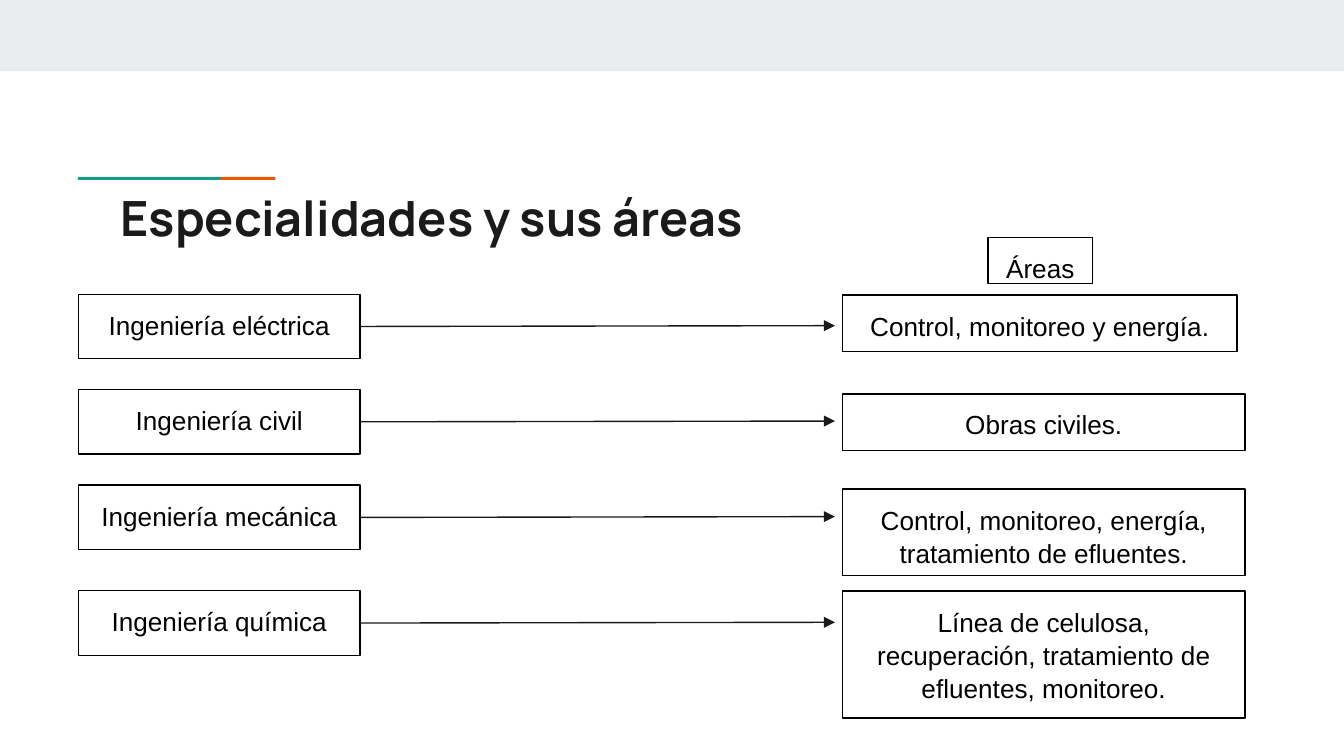
from pptx import Presentation
from pptx.dml.color import RGBColor as Rgb
from pptx.enum.shapes import MSO_CONNECTOR as Conn, MSO_SHAPE as Kind
from pptx.enum.text import MSO_ANCHOR as Anchor, PP_ALIGN as Align
from pptx.oxml.ns import qn
from pptx.util import Pt
from lxml.etree import SubElement as Sub

HUES = {"band": "E9EDEE", "green": "1A9988", "orange": "EB5600",
        "ink": "1A1A1A", "black": "000000"}
TITLE = {"name": "Manrope", "size": Pt(26), "bold": True}
LABEL = {"name": "Arial", "size": Pt(14)}
INSET = Pt(7.2)

# Field, top of field, area, area box (top, width, height)
ROWS = [
    ("Ingeniería eléctrica", 157.6, "Control, monitoreo y energía.",
     (158.1, 211.2, 30.4)),
    ("Ingeniería civil", 208.7, "Obras civiles.", (211, 215.5, 30.4)),
    ("Ingeniería mecánica", 259.9,
     "Control, monitoreo, energía, tratamiento de efluentes.",
     (262, 215.5, 46.5)),
    ("Ingeniería química", 316.5,
     "Línea de celulosa, recuperación, tratamiento de efluentes, monitoreo.",
     (316.7, 215.5, 68.1)),
]


def hue(name):
    return Rgb.from_string(HUES[name])


def write(shape, text, style, color, align):
    frame = shape.text_frame
    formats = {"word_wrap": True, "vertical_anchor": Anchor.TOP,
               "margin_left": INSET, "margin_right": INSET,
               "margin_top": INSET, "margin_bottom": INSET}
    for key, value in formats.items():
        setattr(frame, key, value)
    para = frame.paragraphs[0]
    para.alignment = align
    run = para.add_run()
    run.text = text
    for key, value in style.items():
        setattr(run.font, key, value)
    run.font.color.rgb = hue(color)
    return para


def add_bar(slide, box, color):
    bar = slide.shapes.add_shape(Kind.RECTANGLE, *map(Pt, box))
    bar.shadow.inherit = False
    bar.fill.solid()
    bar.fill.fore_color.rgb = hue(color)
    bar.line.fill.background()


def add_label(slide, box, text):
    label = slide.shapes.add_shape(Kind.RECTANGLE, *map(Pt, box))
    label.shadow.inherit = False
    label.fill.background()
    label.line.color.rgb = hue("black")
    label.line.width = Pt(0.75)
    para = write(label, text, LABEL, "black", Align.CENTER)
    para.line_spacing = 1.05


def add_arrow(slide, start, end):
    arrow = slide.shapes.add_connector(Conn.STRAIGHT, *map(Pt, start + end))
    arrow.line.color.rgb = hue("ink")
    arrow.line.width = Pt(0.75)
    Sub(arrow.line._get_or_add_ln(), qn("a:tailEnd"), type="triangle")
    Sub(arrow._element.spPr, qn("a:effectLst"))


def add_head(slide, box):
    left, top, width, height = box
    # Band and two-tone accent
    add_bar(slide, (left, top, width, 38.2), "band")
    add_bar(slide, (left + 41.8, top + 94.8, 76.7, 1.6), "green")
    add_bar(slide, (left + 118.5, top + 94.8, 29, 1.6), "orange")
    # Title
    title = slide.shapes.add_textbox(
        *map(Pt, (left + 57.4, top + 93.6, 605.5, height - 93.6)))
    write(title, "Especialidades y sus áreas", TITLE, "ink", Align.LEFT)


def add_map(slide, box):
    left, top, width, _ = box
    field_w, field_h, area_w = 150.6, 34.6, 215.5
    area_x = left + width - area_w
    # Column heading
    add_label(slide, (area_x + 77.7, top, 56.2, 24.5), "Áreas")
    # Each field points to its areas
    for field, row_y, area, (area_y, wide, high) in ROWS:
        mid = row_y + field_h / 2
        add_label(slide, (left, row_y, field_w, field_h), field)
        add_arrow(slide, (left + field_w, mid), (area_x - 4.2, mid - 0.4))
        add_label(slide, (area_x, area_y, wide, high), area)


def main():
    deck = Presentation()
    deck.slide_width, deck.slide_height = Pt(720), Pt(405)
    slide = deck.slides.add_slide(deck.slide_layouts[6])
    add_head(slide, (0, 0, 720, 136.1))
    add_map(slide, (42.2, 127.3, 624.8, 257.5))
    deck.save("out.pptx")


if __name__ == "__main__":
    main()
